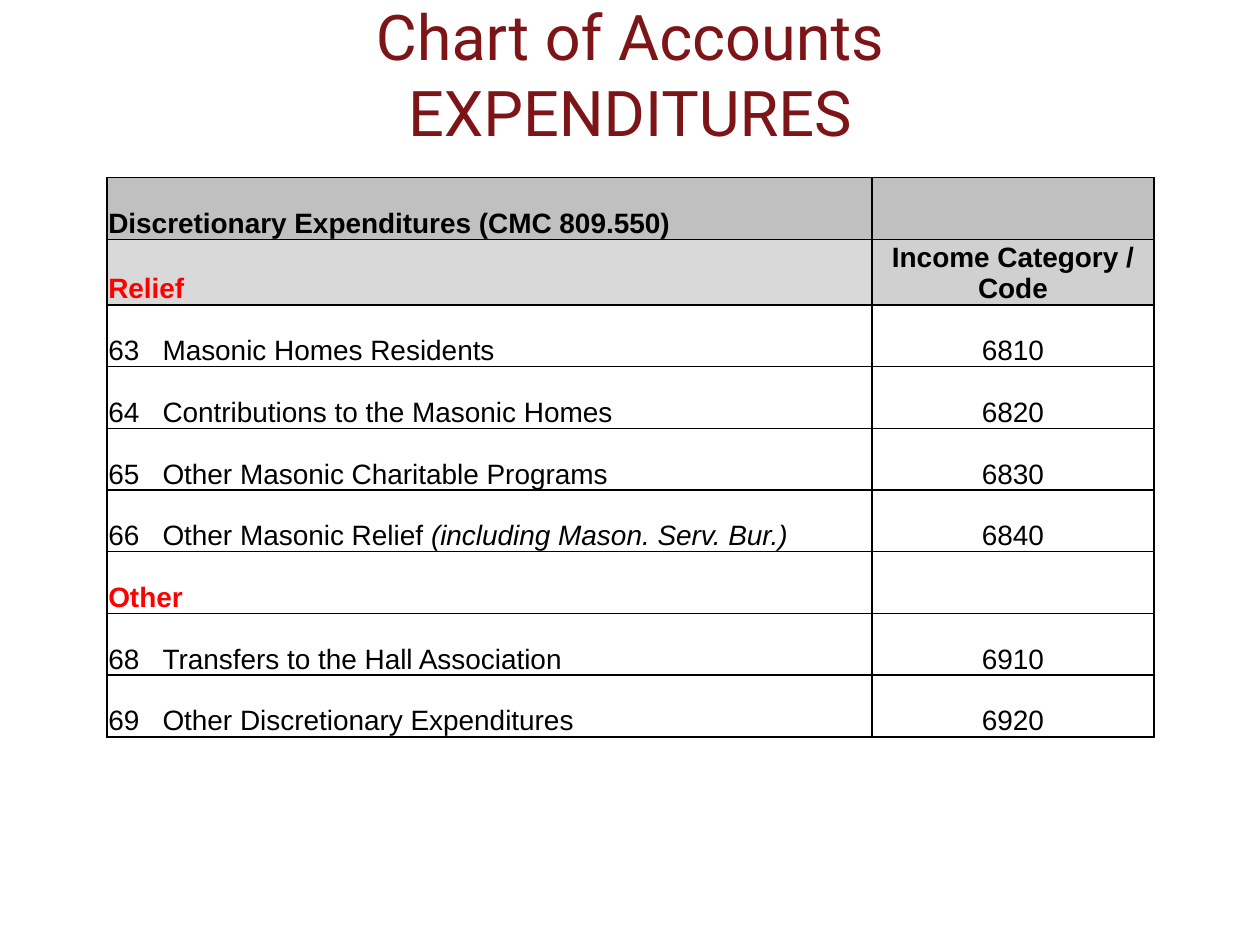
from dataclasses import dataclass

from lxml import etree
from pptx import Presentation
from pptx.dml.color import RGBColor as RGB
from pptx.enum.text import MSO_ANCHOR as Anchor, MSO_AUTO_SIZE as AutoSize, PP_ALIGN as Align
from pptx.oxml.ns import qn
from pptx.util import Inches, Pt


@dataclass(frozen=True)
class Theme:
    title_font: str = "Roboto"
    table_font: str = "Arial"
    title_size: int = 36
    table_size: int = 16
    title: str = "7D1418"
    text: str = "000000"
    group: str = "FF0000"
    border: str = "000000"
    heading_fill: str = "C0C0C0"
    relief_fill: str = "D9D9D9"
    code_fill: str = "D0D0D0"


theme = Theme()


def add_borders(cell):
    properties = cell._tc.get_or_add_tcPr()
    for side in ("a:lnL", "a:lnR", "a:lnT", "a:lnB"):
        line = etree.SubElement(properties, qn(side), w=str(Pt(1)))
        solid = etree.SubElement(line, qn("a:solidFill"))
        etree.SubElement(solid, qn("a:srgbClr"), val=theme.border)


def add_tab_stop(paragraph, position):
    tabs = etree.SubElement(paragraph._p.get_or_add_pPr(), qn("a:tabLst"))
    etree.SubElement(tabs, qn("a:tab"), pos=str(position), algn="l")


prs = Presentation()
prs.slide_width, prs.slide_height = Inches(10), Inches(7.5)
slide = prs.slides.add_slide(prs.slide_layouts[5])

# Title
title = slide.shapes.title
title.left, title.top = Inches(0.5), Inches(0)
title.width, title.height = Inches(9), Inches(1.16)
title.text_frame.text = "Chart of Accounts\vEXPENDITURES"
title.text_frame.auto_size = AutoSize.NONE
title.text_frame.vertical_anchor = Anchor.MIDDLE
heading = title.text_frame.paragraphs[0]
heading.alignment = Align.CENTER
for run in heading.runs:
    run.font.name = theme.title_font
    run.font.size = Pt(theme.title_size)
    run.font.color.rgb = RGB.from_string(theme.title)

# Account rows: label, code, bold, label colour, fills
plain = (False, theme.text, (None, None))
accounts = [
    ("Discretionary Expenditures (CMC 809.550)", "", True, theme.text,
     (theme.heading_fill, theme.heading_fill)),
    ("Relief", "Income Category / Code", True, theme.group,
     (theme.relief_fill, theme.code_fill)),
    ("63\tMasonic Homes Residents", "6810", *plain),
    ("64\tContributions to the Masonic Homes", "6820", *plain),
    ("65\tOther Masonic Charitable Programs", "6830", *plain),
    ("66\tOther Masonic Relief ", "6840", *plain),
    ("Other", "", True, theme.group, (None, None)),
    ("68\tTransfers to the Hall Association", "6910", *plain),
    ("69\tOther Discretionary Expenditures", "6920", *plain),
]
relief_notes = {"6840": "(including Mason. Serv. Bur.)"}

# Table frame
table = slide.shapes.add_table(len(accounts), 2, Inches(0.85), Inches(1.41),
                               Inches(8.31), Inches(4.45)).table
table.first_row = table.horz_banding = False
for column, width in zip(table.columns, (6.07, 2.24)):
    column.width = Inches(width)
for row in table.rows:
    row.height = Inches(0.49)
table.rows[1].height = Inches(0.52)

# Table cells
for row, (label, code, bold, label_color, fills) in zip(table.rows, accounts):
    entries = zip(row.cells, (label, code), (label_color, theme.text),
                  (Align.LEFT, Align.CENTER), fills)
    for cell, words, color, alignment, fill in entries:
        add_borders(cell)
        if fill:
            cell.fill.solid()
            cell.fill.fore_color.rgb = RGB.from_string(fill)
        else:
            cell.fill.background()
        cell.vertical_anchor = Anchor.BOTTOM
        cell.margin_left = cell.margin_right = cell.margin_top = Inches(0.01)
        cell.margin_bottom = 0
        if not words:
            continue
        entry = cell.text_frame.paragraphs[0]
        entry.text = words
        entry.alignment = alignment
        if "\t" in words:
            add_tab_stop(entry, Inches(0.43))
        if words == label and code in relief_notes:
            note = entry.add_run()
            note.text = relief_notes[code]
            note.font.italic = True
        for run in entry.runs:
            run.font.name = theme.table_font
            run.font.size = Pt(theme.table_size)
            run.font.bold = bold
            run.font.color.rgb = RGB.from_string(color)

prs.save("out.pptx")
